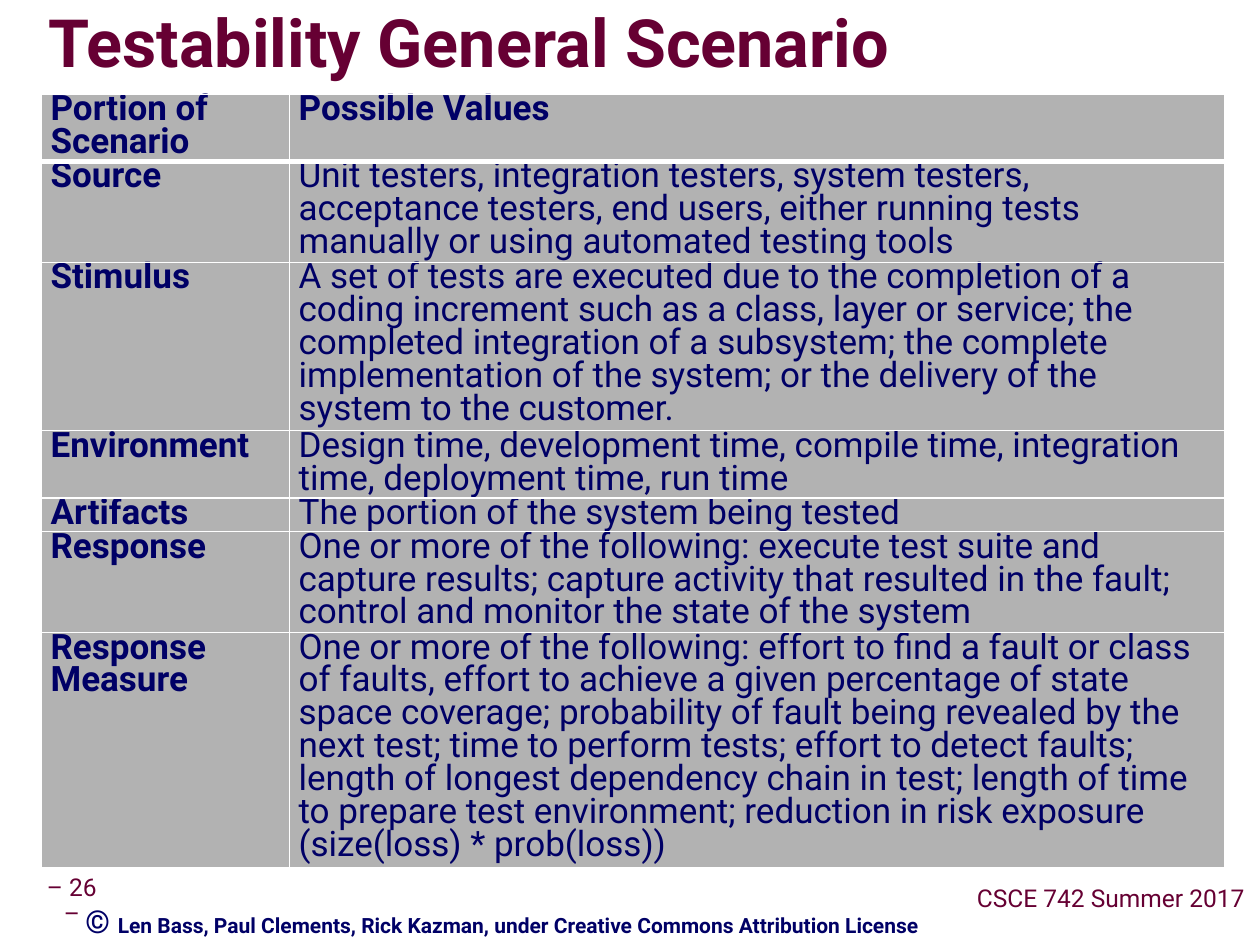
import dataclasses

import lxml.etree
import pptx
import pptx.dml.color
import pptx.enum.text
import pptx.oxml.ns
import pptx.util
from pptx.util import Cm

ALIGN = pptx.enum.text.PP_ALIGN
ANCHOR = pptx.enum.text.MSO_ANCHOR
qn = pptx.oxml.ns.qn


@dataclasses.dataclass(frozen=True)
class Theme:
    font: str = "Roboto"
    accent: str = "660033"
    ink: str = "000066"
    cell: str = "B2B2B2"
    rule: str = "FFFFFF"
    shadow: str = "969696"
    title_size: int = 38
    table_size: int = 20
    symbol_size: int = 18
    footer_size: int = 14
    credit_size: int = 12


class SlideBuilder:
    """Hold the theme and the current slide, and add styled elements to it."""

    def __init__(self, slide, theme):
        self.slide = slide
        self.theme = theme

    def add_run(self, paragraph, text, size, color, bold=False):
        run = paragraph.add_run()
        run.text = text
        run.font.size = pptx.util.Pt(size)
        run.font.bold = bold
        run.font.color.rgb = pptx.dml.color.RGBColor.from_string(color)
        run.font.name = self.theme.font
        return run

    def set_insets(self, target, horizontal, vertical):
        target.margin_left = target.margin_right = Cm(horizontal)
        target.margin_top = target.margin_bottom = Cm(vertical)

    def add_shadow(self, run):
        fill = run.font._element.find(qn("a:solidFill"))
        effects = lxml.etree.Element(qn("a:effectLst"))
        fill.addnext(effects)
        outer = lxml.etree.SubElement(
            effects, qn("a:outerShdw"), dist="38100", dir="2700000", algn="tl")
        lxml.etree.SubElement(outer, qn("a:srgbClr"), val=self.theme.shadow)

    def add_title(self, text, left, top, width, height):
        title = self.slide.shapes.title
        title.left, title.top, title.width, title.height = map(Cm, (left, top, width, height))
        frame = title.text_frame
        frame.auto_size = pptx.enum.text.MSO_AUTO_SIZE.NONE
        frame.vertical_anchor = ANCHOR.MIDDLE
        self.set_insets(frame, 0, 0)
        heading = frame.paragraphs[0]
        heading.alignment = ALIGN.LEFT
        heading.line_spacing = 0.87
        self.add_shadow(self.add_run(
            heading, text, self.theme.title_size, self.theme.accent, True))

    def add_textbox(self, left, top, width, height):
        box = self.slide.shapes.add_textbox(*map(Cm, (left, top, width, height)))
        box.text_frame.word_wrap = True
        return box.text_frame

    def add_footer(self, text, left, top, width, height, inset):
        frame = self.add_textbox(left, top, width, height)
        frame.vertical_anchor = ANCHOR.MIDDLE
        self.set_insets(frame, inset, 0.13)
        footer = frame.paragraphs[0]
        footer.alignment = ALIGN.CENTER
        footer.line_spacing = 0.9
        self.add_run(footer, text, self.theme.footer_size, self.theme.accent)

    def add_credit(self, symbol, text, left, top, width, height):
        credit = self.add_textbox(left, top, width, height).paragraphs[0]
        self.add_run(credit, symbol, self.theme.symbol_size, self.theme.ink, True)
        self.add_run(credit, text, self.theme.credit_size, self.theme.ink, True)

    def set_borders(self, cell, top, bottom):
        properties = cell._tc.get_or_add_tcPr()
        edges = (("a:lnL", 1), ("a:lnR", 1), ("a:lnT", top), ("a:lnB", bottom))
        for position, (edge, points) in enumerate(edges):
            line = lxml.etree.Element(qn(edge), w=str(pptx.util.Pt(points)))
            fill = lxml.etree.SubElement(line, qn("a:solidFill"))
            lxml.etree.SubElement(fill, qn("a:srgbClr"), val=self.theme.rule)
            properties.insert(position, line)

    def fill_cell(self, cell, text, bold):
        cell.fill.solid()
        cell.fill.fore_color.rgb = pptx.dml.color.RGBColor.from_string(self.theme.cell)
        self.set_insets(cell, 0.18, 0)
        entry = cell.text_frame.paragraphs[0]
        entry.line_spacing = 0.8
        for number, line in enumerate(text.split("\n")):
            if number:
                entry.add_line_break()
            self.add_run(entry, line, self.theme.table_size, self.theme.ink, bold)

    def add_scenario_table(self, rows, left, top, widths, height):
        frame = self.slide.shapes.add_table(
            len(rows), len(widths), Cm(left), Cm(top), Cm(sum(widths)), Cm(height))
        table = frame.table
        for column, width in zip(table.columns, widths):
            column.width = Cm(width)
        total_lines = sum(lines for lines, *_ in rows)
        for r, (lines, *texts) in enumerate(rows):
            table.rows[r].height = int(Cm(height) * lines / total_lines)
            for c, text in enumerate(texts):
                cell = table.cell(r, c)
                self.fill_cell(cell, text, bold=r == 0 or c == 0)
                self.set_borders(cell, 3 if r == 1 else 1, 3 if r == 0 else 1)


SCENARIO = [
    (2, "Portion of\nScenario", "Possible Values"),
    (3, "Source",
     "Unit testers, integration testers, system testers, acceptance testers, "
     "end users, either running tests manually or using automated testing tools"),
    (5, "Stimulus",
     "A set of tests are executed due to the completion of a coding increment "
     "such as a class, layer or service; the completed integration of a subsystem; "
     "the complete implementation of the system; or the delivery of the system "
     "to the customer."),
    (2, "Environment",
     "Design time, development time, compile time, integration time, "
     "deployment time, run time"),
    (1, "Artifacts", "The portion of the system being tested"),
    (3, "Response",
     "One or more of the following: execute test suite and capture results; "
     "capture activity that resulted in the fault; control and monitor the state "
     "of the system"),
    (7, "Response\nMeasure",
     "One or more of the following: effort to find a fault or class of faults, "
     "effort to achieve a given percentage of state space coverage; probability of "
     "fault being revealed by the next test; time to perform tests; effort to detect "
     "faults; length of longest dependency chain in test; length of time to prepare "
     "test environment; reduction in risk exposure (size(loss) * prob(loss))"),
]


def main():
    deck = pptx.Presentation()
    deck.slide_width, deck.slide_height = Cm(25.4), Cm(19.05)
    slide = deck.slides.add_slide(deck.slide_layouts.get_by_name("Title Only"))
    builder = SlideBuilder(slide, Theme())
    builder.add_footer("– 26 –", 0.61, 17.78, 1.68, 0.79, inset=0.2)
    builder.add_footer("CSCE 742 Summer 2017", 19.46, 17.75, 5.87, 0.79, inset=0.13)
    builder.add_title("Testability General Scenario", 0.97, 0, 23.8, 1.9)
    builder.add_scenario_table(SCENARIO, 0.84, 1.9, (5, 18.84), 15.57)
    builder.add_credit(
        "© ", "Len Bass, Paul Clements, Rick Kazman, under Creative Commons "
        "Attribution License", 1.47, 18.06, 18.62, 0.79)
    deck.save("out.pptx")


if __name__ == "__main__":
    main()
